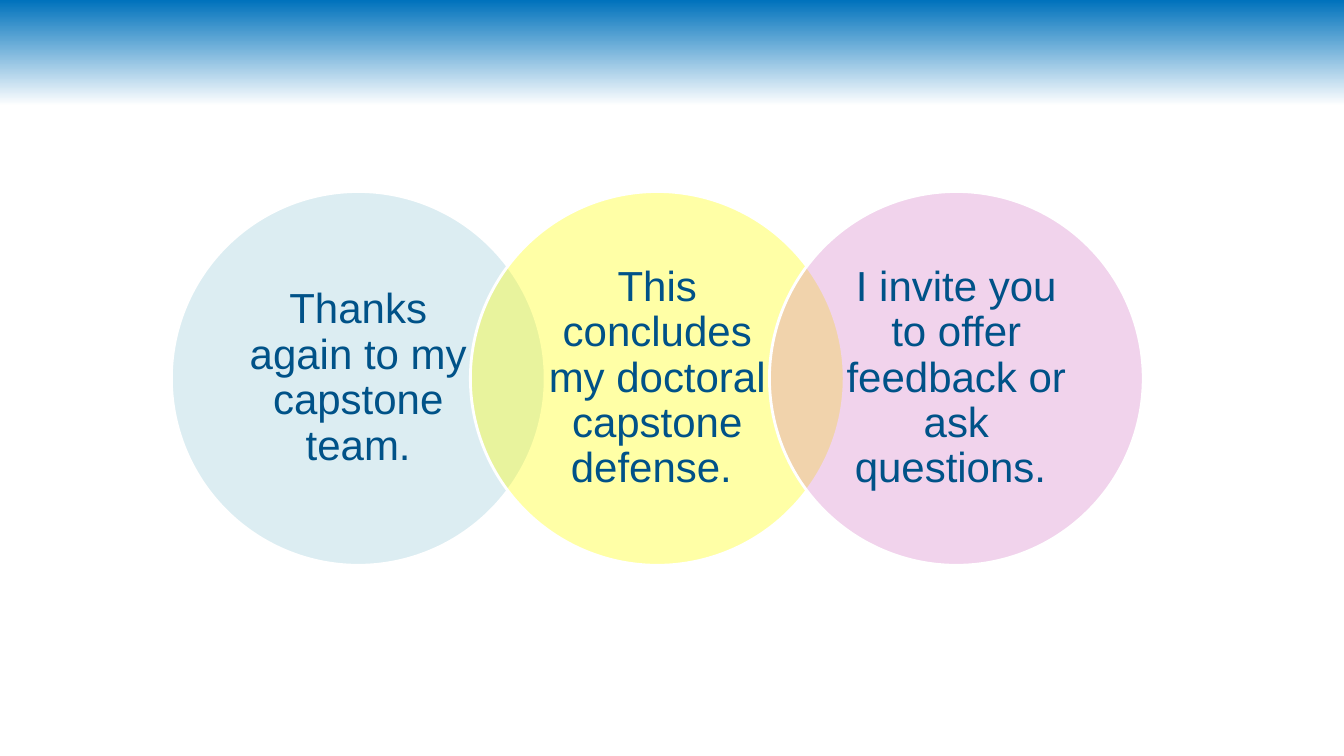
from lxml.etree import SubElement
from pptx import Presentation
from pptx.dml.color import RGBColor
from pptx.enum.shapes import MSO_SHAPE
from pptx.enum.text import MSO_ANCHOR, PP_ALIGN
from pptx.oxml.ns import qn
from pptx.util import Pt

COLORS = {
    "sky": "0072BC",
    "white": "FFFFFF",
    "text": "005288",
    "blue": "BBDDE6",
    "yellow": "FFFF00",
    "pink": "CE62BE",
}
CIRCLES = [
    ("Thanks again to my capstone team.", "blue", 50),
    ("This concludes my doctoral capstone defense. ", "yellow", 35),
    ("I invite you to offer feedback or ask questions. ", "pink", 28),
]
FADE = [("sky", 0), ("white", 0.14)]
LEFT, TOP, SIZE, STEP = 122.4, 136.8, 267, 213.6


def color(name):
    """Return the named colour."""
    return RGBColor.from_string(COLORS[name])


def paint(slide):
    """Fill the background with a fade from the top edge."""
    fill = slide.background.fill
    fill.gradient()
    fill.gradient_angle = 270
    for stop, (name, place) in zip(fill.gradient_stops, FADE):
        stop.color.rgb = color(name)
        stop.position = place


def circle(slide, left, text, name, alpha):
    """Draw one see-through circle with its message."""
    shape = slide.shapes.add_shape(
        MSO_SHAPE.OVAL, Pt(left), Pt(TOP), Pt(SIZE), Pt(SIZE))
    shape.shadow.inherit = False
    shape.fill.solid()
    shape.fill.fore_color.rgb = color(name)
    tint = shape.fill._xPr.find(qn("a:solidFill"))[0]
    SubElement(tint, qn("a:alpha"), val=str(alpha * 1000))
    shape.line.color.rgb = color("white")
    shape.line.width = Pt(2)
    frame = shape.text_frame
    frame.word_wrap = True
    frame.vertical_anchor = MSO_ANCHOR.MIDDLE
    frame.margin_left = frame.margin_right = Pt(14.4)
    frame.margin_top = frame.margin_bottom = Pt(2.9)
    frame.text = text
    para = frame.paragraphs[0]
    para.alignment = PP_ALIGN.CENTER
    para.line_spacing = 0.9
    font = para.runs[0].font
    font.name = "Arial"
    font.size = Pt(30)
    font.color.rgb = color("text")


def main():
    """Build and save the slide."""
    deck = Presentation()
    deck.slide_width, deck.slide_height = Pt(960), Pt(540)
    slide = deck.slides.add_slide(deck.slide_layouts[6])
    paint(slide)
    for i, (text, name, alpha) in enumerate(CIRCLES):
        circle(slide, LEFT + i * STEP, text, name, alpha)
    deck.save("out.pptx")


if __name__ == "__main__":
    main()
